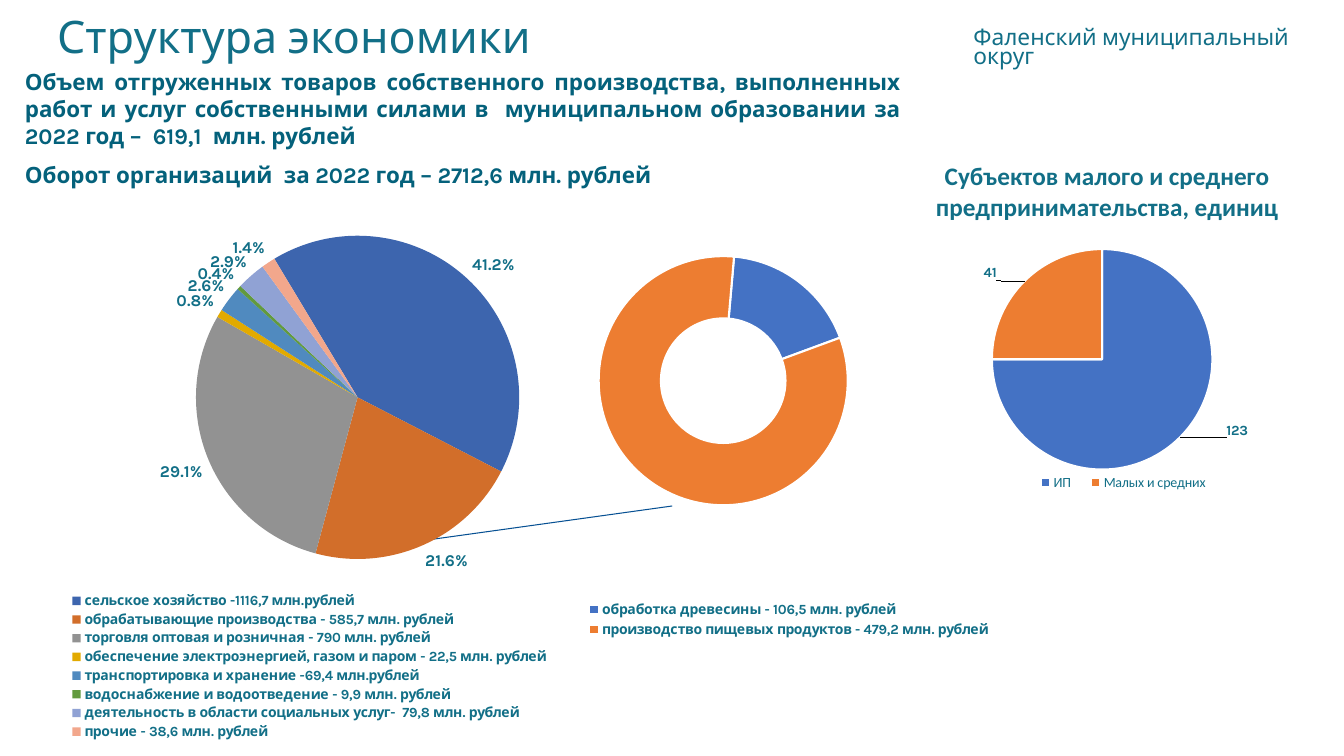
from lxml.etree import SubElement
from pptx import Presentation
from pptx.chart.data import CategoryChartData as ChartData
from pptx.dml.color import RGBColor
from pptx.enum.chart import XL_CHART_TYPE as Kind, XL_LABEL_POSITION as LabelPos
from pptx.enum.chart import XL_LEGEND_POSITION as LegendPos
from pptx.enum.shapes import MSO_CONNECTOR as Connector
from pptx.enum.text import MSO_ANCHOR as Anchor, PP_ALIGN as Align
from pptx.oxml import parse_xml
from pptx.oxml.ns import nsdecls, qn
from pptx.util import Cm, Pt

TEAL, DARK_TEAL, NAVY, WHITE = "126F87", "04617B", "065093", "FFFFFF"
BLUE, ORANGE = "4472C4", "ED7D31"
SECTORS = [
    ("сельское хозяйство -1116,7 млн.рублей", 0.412, "3D65AE"),
    ("обрабатывающие производства - 585,7 млн. рублей", 0.216, "D26E2A"),
    ("торговля оптовая и розничная - 790 млн. рублей", 0.291, "929292"),
    ("обеспечение электроэнергией, газом и паром - 22,5 млн. рублей", 0.008, "E2AA00"),
    ("транспортировка и хранение -69,4 млн.рублей", 0.026, "508ABF"),
    ("водоснабжение и водоотведение - 9,9 млн. рублей", 0.004, "629A3E"),
    ("деятельность в области социальных услуг-  79,8 млн. рублей", 0.029, "90A2D4"),
    ("прочие - 38,6 млн. рублей", 0.014, "F2A78C"),
]
MANUFACTURING = [
    ("обработка древесины - 106,5 млн. рублей", 18, BLUE),
    ("производство пищевых продуктов - 479,2 млн. рублей", 82, ORANGE),
]
BUSINESSES = [("ИП", 123, BLUE), ("Малых и средних", 41, ORANGE)]
BUSINESS_TITLE = "Субъектов малого и среднего предпринимательства, единиц"


def rgb(hex_colour):
    """Return the colour for a hex string."""
    return RGBColor.from_string(hex_colour)


def set_font(font, size, colour=TEAL, bold=False, name="Karla"):
    """Apply one set of character formats to a font."""
    formats = {"size": Pt(size), "bold": bold, "name": name}
    for attribute, value in formats.items():
        setattr(font, attribute, value)
    font.color.rgb = rgb(colour)


def add_text(slide, place, text, size, colour=TEAL, bold=False, paragraph_format=None,
             anchor=Anchor.TOP):
    """Add a wrapped one-paragraph text box."""
    frame = slide.shapes.add_textbox(*map(Cm, place)).text_frame
    for attribute, value in {"word_wrap": True, "vertical_anchor": anchor}.items():
        setattr(frame, attribute, value)
    paragraph = frame.paragraphs[0]
    for attribute, value in (paragraph_format or {}).items():
        setattr(paragraph, attribute, value)
    run = paragraph.add_run()
    run.text = text
    set_font(run.font, size, colour, bold)


def set_layout(parent, position, index=0, inner=False):
    """Give a chart part a manual layout in fractions of the chart."""
    for previous in parent.findall(qn("c:layout")):
        parent.remove(previous)
    layout = parse_xml(f"<c:layout {nsdecls('c')}><c:manualLayout/></c:layout>")
    settings = [("layoutTarget", "inner")] if inner else []
    if len(position) == 4:
        settings += [("xMode", "edge"), ("yMode", "edge")]
    settings += zip("xywh", position)
    for tag, value in settings:
        SubElement(layout[0], qn(f"c:{tag}")).set("val", str(value))
    parent.insert(index, layout)


def set_start_angle(chart, angle):
    """Turn the first slice of a round chart."""
    round_plot = chart.element.xpath("c:chart/c:plotArea/*[c:ser]")[0]
    first_slice = round_plot.find(qn("c:firstSliceAng"))
    if first_slice is None:
        first_slice = SubElement(round_plot, qn("c:firstSliceAng"))
    first_slice.set("val", str(angle))


def add_round_chart(slide, kind, place, slices, plot_position, legend_position,
                    angle=0, border=None, font_name="Karla", bold=True):
    """Add a pie or doughnut chart with coloured slices and a legend."""
    data = ChartData()
    data.categories = [label for label, _, _ in slices]
    data.add_series("Series 1", [value for _, value, _ in slices])
    chart = slide.shapes.add_chart(kind, *map(Cm, place), data).chart
    chart.has_title = False
    chart.has_legend = True
    set_font(chart.font, 10, name=font_name)
    for attribute, value in {"position": LegendPos.BOTTOM, "include_in_layout": False}.items():
        setattr(chart.legend, attribute, value)
    set_font(chart.legend.font, 10, bold=bold, name=font_name)
    for index, (_, _, colour) in enumerate(slices):
        slice_format = chart.series[0].points[index].format
        slice_format.fill.solid()
        slice_format.fill.fore_color.rgb = rgb(colour)
        if border:
            slice_format.line.color.rgb = rgb(border)
            slice_format.line.width = Pt(1.5)
        else:
            slice_format.line.fill.background()
    set_layout(chart.element.xpath("c:chart/c:plotArea")[0], plot_position, inner=True)
    set_layout(chart.element.xpath("c:chart/c:legend")[0], legend_position, 1)
    set_start_angle(chart, angle)
    return chart


def label_shares(chart):
    """Show each share outside its slice as a percentage."""
    labels = chart.series[0].data_labels
    formats = {"show_value": True, "number_format": "0.0%", "number_format_is_linked": False,
               "position": LabelPos.OUTSIDE_END}
    for attribute, value in formats.items():
        setattr(labels, attribute, value)
    set_font(labels.font, 11.8, bold=True)


def label_counts(chart, offsets):
    """Show each count at an offset from its slice."""
    set_font(chart.series[0].data_labels.font, 10, bold=True)
    for index, offset in enumerate(offsets):
        label = chart.series[0].points[index].data_label
        label.position = LabelPos.OUTSIDE_END
        set_font(label.font, 10, bold=True)
        set_layout(chart.element.xpath(f".//c:dLbl[c:idx/@val='{index}']")[0], offset, 1)


def add_chart_title(chart, text):
    """Put a bold title above a chart."""
    frame = chart.chart_title.text_frame
    frame.text = text
    set_font(frame.paragraphs[0].runs[0].font, 18, bold=True, name="Calibri")
    chart.chart_title.include_in_layout = False


def add_line(slide, ends, colour, width):
    """Add a thin straight line without a shadow."""
    line = slide.shapes.add_connector(Connector.STRAIGHT, *map(Cm, ends))
    line.line.color.rgb = rgb(colour)
    line.line.width = Pt(width)
    SubElement(line.element.spPr, qn("a:effectLst"))


def main():
    """Build the slide on the structure of the economy."""
    deck = Presentation()
    deck.slide_width, deck.slide_height = Cm(33.87), Cm(19.05)
    slide = deck.slides.add_slide(deck.slide_layouts[6])

    manufacturing = add_round_chart(
        slide, Kind.DOUGHNUT, (12.55, 5.74, 14.5, 12.14), MANUFACTURING,
        (0.175, 0.044, 0.433, 0.547), (0.146, 0.768, 0.72, 0.09), 5, WHITE)
    manufacturing.element.xpath(".//c:holeSize")[0].set("val", "53")

    add_text(slide, (1.19, 0.53, 29.21, 0.89), "Структура экономики", 32,
             paragraph_format={"line_spacing": 0.9}, anchor=Anchor.MIDDLE)
    add_text(slide, (0.38, 3.94, 26.01, 0.94),
             "Оборот организаций  за 2022 год – 2712,6 млн. рублей", 16, DARK_TEAL, True)
    add_line(slide, (9.45, 13.79, 16.94, 12.75), NAVY, 0.75)

    sectors = add_round_chart(
        slide, Kind.PIE, (1.32, 5.94, 12.8, 12.83), SECTORS,
        (0.216, 0, 0.77, 0.635), (0.026, 0.696, 0.96, 0.3), 329)
    label_shares(sectors)

    businesses = add_round_chart(
        slide, Kind.PIE, (22.02, 3.56, 11.76, 9.5), BUSINESSES,
        (0.253, 0.286, 0.473, 0.585), (0.325, 0.875, 0.42, 0.06), 0, WHITE, "Calibri", False)
    add_chart_title(businesses, BUSINESS_TITLE)
    label_counts(businesses, [(0.09, -0.05), (-0.05, 0.01)])

    add_text(slide, (0.38, 1.6, 22.58, 2.31),
             "Объем отгруженных товаров собственного производства, выполненных работ и услуг "
             "собственными силами в  муниципальном образовании за 2022 год –  619,1  млн. рублей",
             16, DARK_TEAL, True, {"alignment": Align.JUSTIFY})
    add_text(slide, (24.28, 0.79, 9.6, 0.89), "Фаленский муниципальный округ", 16.2,
             paragraph_format={"line_spacing": 0.7}, anchor=Anchor.MIDDLE)
    deck.save("out.pptx")


if __name__ == "__main__":
    main()
